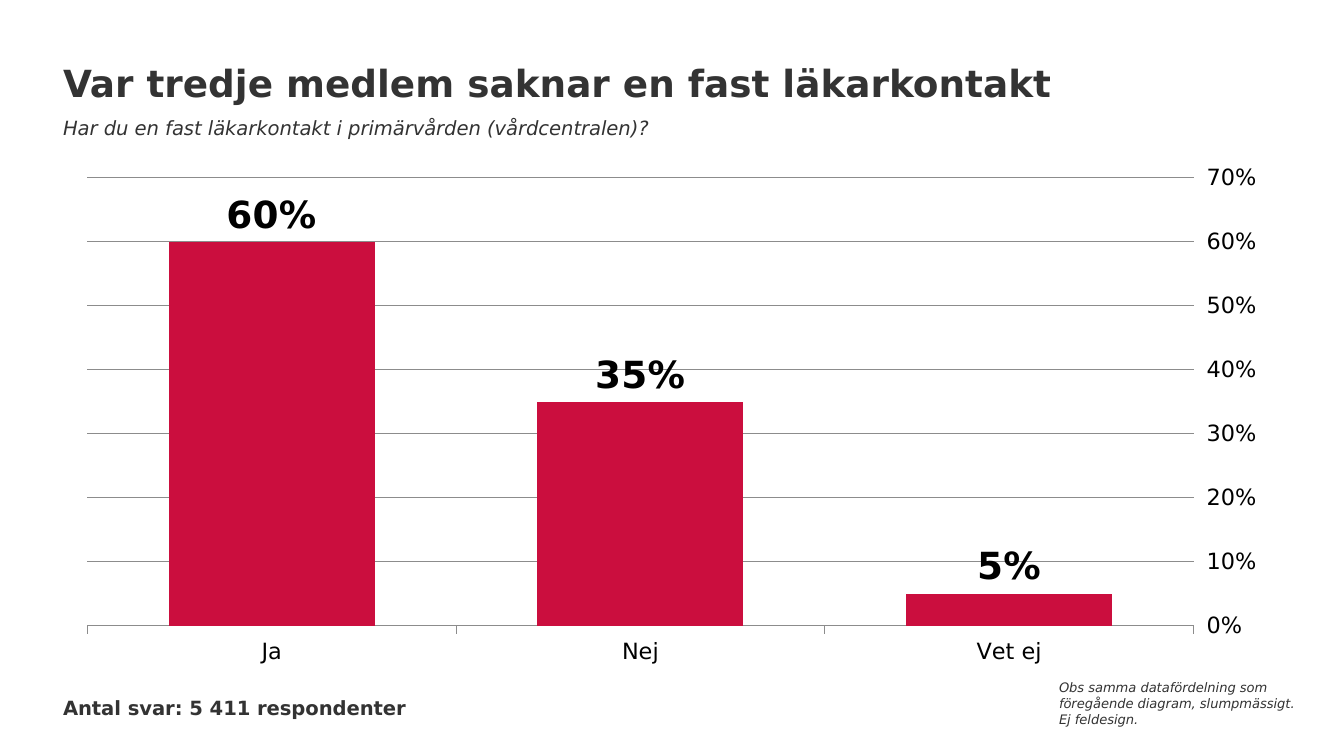
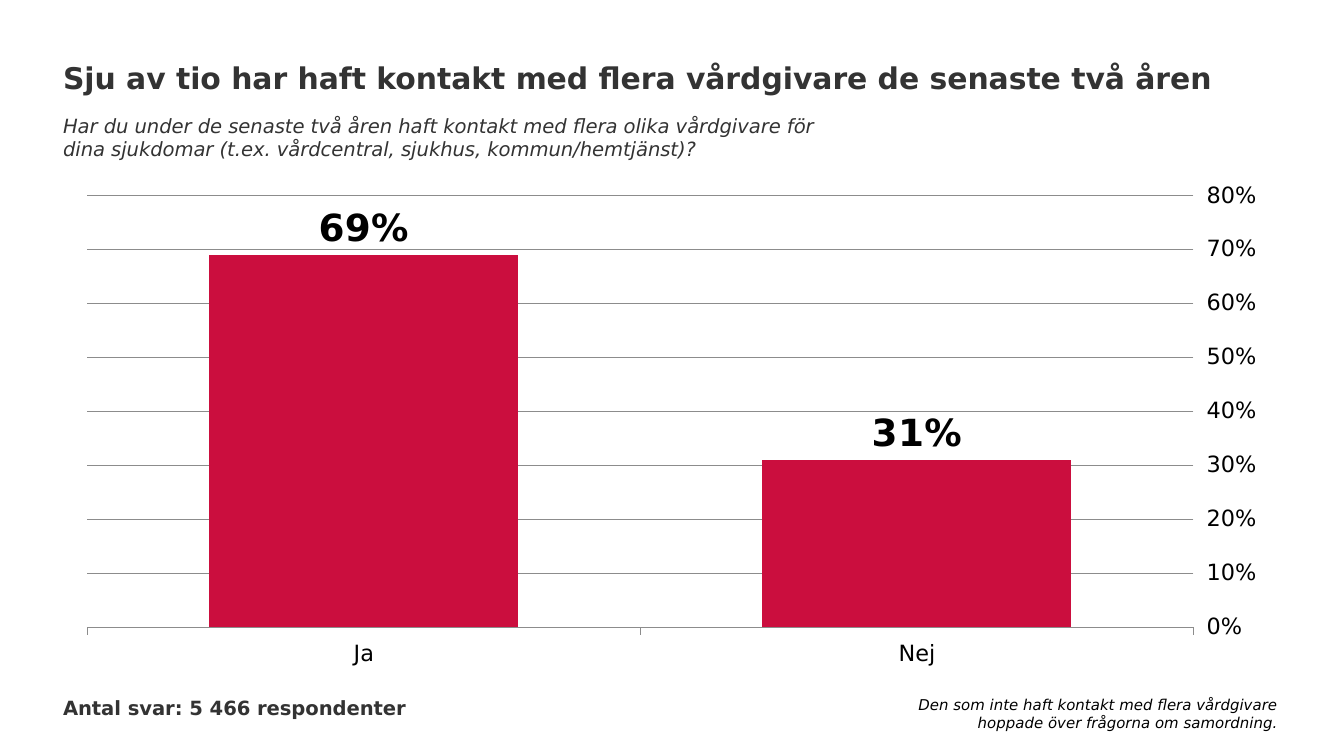
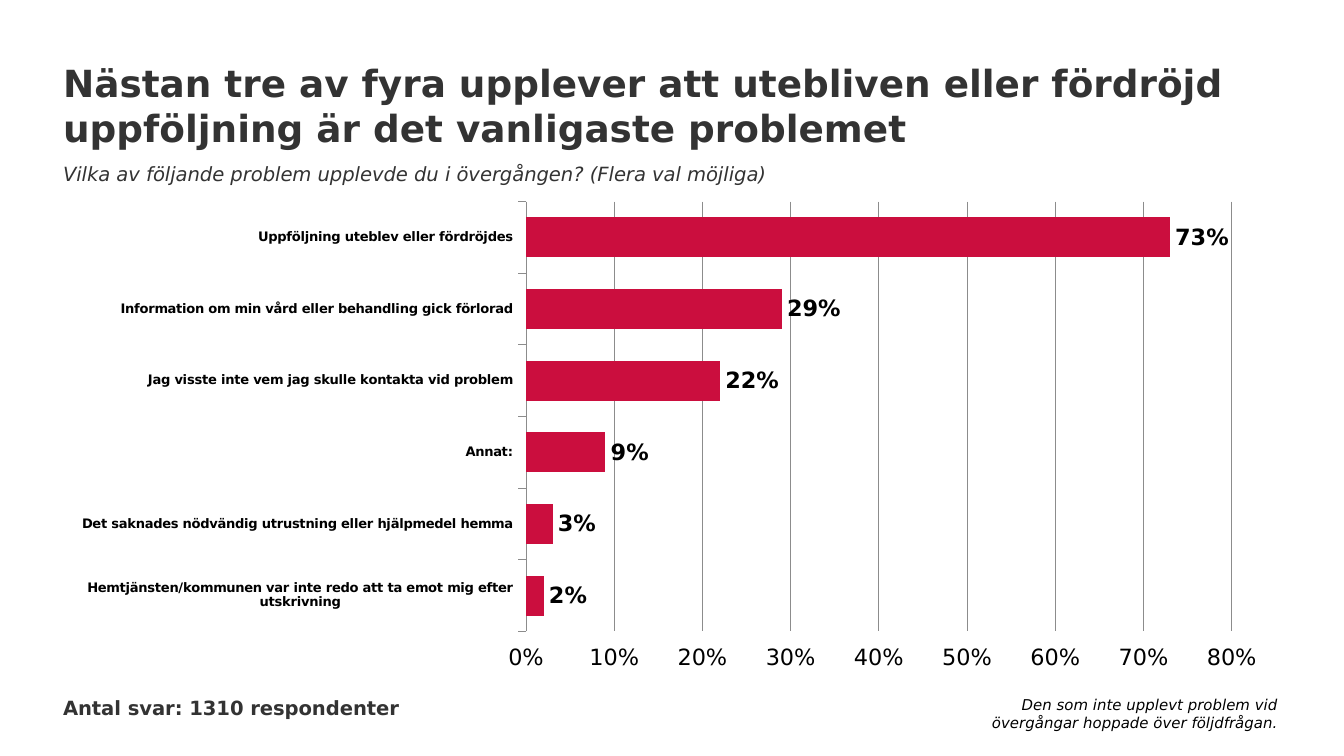
from copy import deepcopy
from pptx import Presentation, util as u
from pptx.chart import data as chart_data
from pptx.dml import color
from pptx.enum import chart as charts, text
from pptx.oxml import ns

THEME = {
    "font": "DejaVu Sans",
    "bar": color.RGBColor.from_string("CB0E3E"),
    "grid": color.RGBColor.from_string("8C8C8C"),
    "ink": color.RGBColor.from_string("333333"),
    "black": color.RGBColor.from_string("000000"),
    "rule": 0.5, "body": 10.5, "axis": 12,
}
PX = 914400 / 134.4
LEFT, WIDTH, FOOT = 63, 1218, 696
COLUMN, BAR = charts.XL_CHART_TYPE.COLUMN_CLUSTERED, charts.XL_CHART_TYPE.BAR_CLUSTERED
START, END = text.PP_ALIGN.LEFT, text.PP_ALIGN.RIGHT


def set_font(font, size, ink, **flags):
    for name, value in {"name": THEME["font"], "size": u.Pt(size), **flags}.items():
        setattr(font, name, value)
    font.color.rgb = THEME[ink]


def write(box, place, words, size, ink="ink", align=START, **flags):
    for name, value in zip(("left", "top", "width", "height"), place):
        setattr(box, name, u.Emu(round(value * PX)))
    frame = box.text_frame
    frame_format = {
        "margin_left": 0, "margin_top": 0, "margin_right": 0, "margin_bottom": 0,
        "word_wrap": True, "vertical_anchor": text.MSO_ANCHOR.TOP,
        "auto_size": text.MSO_AUTO_SIZE.SHAPE_TO_FIT_TEXT,
    }
    for name, value in frame_format.items():
        setattr(frame, name, value)
    para = frame.paragraphs[0]
    para.text = words
    para.alignment = align
    for span in para.runs:
        set_font(span.font, size, ink, **flags)
    for line_break in para._p.findall(ns.qn("a:br")):
        line_break.append(deepcopy(para.runs[0]._r.rPr))


SLIDES = [
    {
        "title": ("Var tredje medlem saknar en fast läkarkontakt", 20, WIDTH, 46),
        "question": ("Har du en fast läkarkontakt i primärvården (vårdcentralen)?", 116, WIDTH, 24),
        "answers": "5 411",
        "note": ("Obs samma datafördelning som föregående diagram, slumpmässigt.\nEj feldesign.",
                 (1059, 680, 241, 47), 7, "ink", START),
        "chart": (COLUMN, 154, 522, 12, 20),
        "values": {"Ja": 0.6, "Nej": 0.35, "Vet ej": 0.05},
    },
    {
        "title": ("Sju av tio har haft kontakt med flera vårdgivare de senaste två åren", 16, WIDTH, 36),
        "question": ("Har du under de senaste två åren haft kontakt med flera olika vårdgivare för "
                     "dina sjukdomar (t.ex. vårdcentral, sjukhus, kommun/hemtjänst)?", 114, 767, 47),
        "answers": "5 466",
        "note": ("Den som inte haft kontakt med flera vårdgivare hoppade över frågorna om samordning.",
                 (911, FOOT, 367, 36), 8, "black", END),
        "chart": (COLUMN, 172, 505, 12, 20),
        "values": {"Ja": 0.69, "Nej": 0.31},
    },
    {
        "title": ("Nästan tre av fyra upplever att utebliven eller fördröjd uppföljning "
                  "är det vanligaste problemet", 20, 1187, 90),
        "question": ("Vilka av följande problem upplevde du i övergången? (Flera val möjliga)",
                     162, WIDTH, 24),
        "answers": "1310",
        "note": ("Den som inte upplevt problem vid övergångar hoppade över följdfrågan.",
                 (976, FOOT, 302, 36), 8, "black", END),
        "chart": (BAR, 192, 489, 7, 12),
        "values": {
            "Uppföljning uteblev eller fördröjdes": 0.73,
            "Information om min vård eller behandling gick förlorad": 0.29,
            "Jag visste inte vem jag skulle kontakta vid problem": 0.22,
            "Annat:": 0.09,
            "Det saknades nödvändig utrustning eller hjälpmedel hemma": 0.03,
            "Hemtjänsten/kommunen var inte redo att ta emot mig efter utskrivning": 0.02,
        },
    },
]

deck = Presentation()
deck.slide_width, deck.slide_height = u.Emu(round(1344 * PX)), u.Emu(round(756 * PX))

for content in SLIDES:
    page = deck.slides.add_slide(deck.slide_layouts[5])

    kind, top, height, category_size, label_size = content["chart"]
    numbers = chart_data.CategoryChartData(number_format="0%")
    numbers.categories = list(content["values"])
    numbers.add_series("Series 1", list(content["values"].values()))
    place = [u.Emu(round(value * PX)) for value in (LEFT, top, WIDTH, height)]
    chart = page.shapes.add_chart(kind, *place, numbers).chart
    chart.has_legend = chart.has_title = False
    set_font(chart.font, THEME["axis"], "black")

    plot = chart.plots[0]
    plot.gap_width = 79
    plot.vary_by_categories = False
    plot.has_data_labels = True
    series_fill = plot.series[0].format.fill
    series_fill.solid()
    series_fill.fore_color.rgb = THEME["bar"]
    label_format = {
        "show_value": True, "number_format": "0%", "number_format_is_linked": False,
        "position": charts.XL_LABEL_POSITION.OUTSIDE_END,
    }
    for name, value in label_format.items():
        setattr(plot.data_labels, name, value)
    set_font(plot.data_labels.font, label_size, "black", bold=True)

    categories, scale = chart.category_axis, chart.value_axis
    category_format = {
        "tick_label_position": charts.XL_TICK_LABEL_POSITION.LOW,
        "major_tick_mark": charts.XL_TICK_MARK.OUTSIDE,
        "reverse_order": kind == BAR,
        "has_major_gridlines": False,
    }
    scale_format = {
        "minimum_scale": 0, "has_major_gridlines": True,
        "tick_label_position": charts.XL_TICK_LABEL_POSITION.HIGH,
        "major_tick_mark": charts.XL_TICK_MARK.OUTSIDE,
    }
    for axis, values in ((categories, category_format), (scale, scale_format)):
        for name, value in values.items():
            setattr(axis, name, value)
    for line in (categories.format.line, scale.major_gridlines.format.line):
        line.color.rgb = THEME["grid"]
        line.width = u.Pt(THEME["rule"])
    scale.format.line.fill.background()
    scale.tick_labels.number_format = "0%"
    scale.tick_labels.number_format_is_linked = False
    set_font(scale.tick_labels.font, THEME["axis"], "black")
    set_font(categories.tick_labels.font, category_size, "black", bold=kind == BAR)

    words, size, width, height = content["title"]
    write(page.shapes.title, (LEFT, 60, width, height), words, size, bold=True)
    words, top, width, height = content["question"]
    note, note_place, note_size, note_ink, note_align = content["note"]
    answers = f"Antal svar: {content['answers']} respondenter"
    for place, line, size, ink, align, flags in (
        ((LEFT, FOOT, 395, 24), answers, THEME["body"], "ink", START, {"bold": True}),
        ((LEFT, top, width, height), words, THEME["body"], "ink", START, {"italic": True}),
        (note_place, note, note_size, note_ink, note_align, {"italic": True}),
    ):
        write(page.shapes.add_textbox(0, 0, 0, 0), place, line, size, ink, align, **flags)

deck.save("out.pptx")
